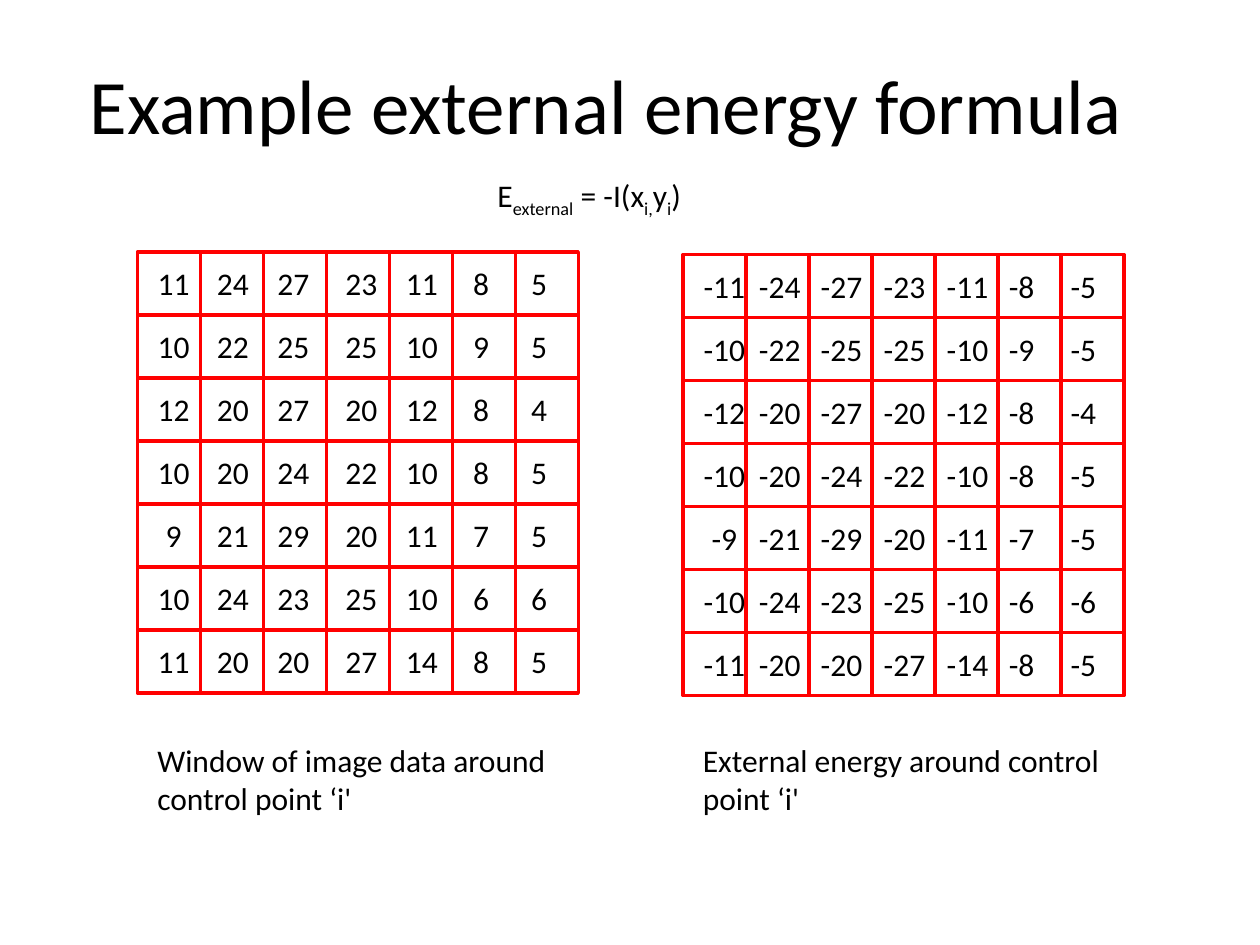
from lxml import etree
from pptx import Presentation
from pptx.dml.color import RGBColor
from pptx.enum import shapes, text
from pptx.oxml.ns import qn
from pptx.util import Inches, Pt

BLACK = RGBColor(0x00, 0x00, 0x00)
RED = RGBColor(0xFF, 0x00, 0x00)
FONT = "Calibri"
CELL = 0.5
TEXT_WIDTH = 3.38

IMAGE_DATA = [
    [11, 24, 27, 23, 11, 8, 5],
    [10, 22, 25, 25, 10, 9, 5],
    [12, 20, 27, 20, 12, 8, 4],
    [10, 20, 24, 22, 10, 8, 5],
    [9, 21, 29, 20, 11, 7, 5],
    [10, 24, 23, 25, 10, 6, 6],
    [11, 20, 20, 27, 14, 8, 5],
]
IMAGE_TABS = [0.13, 0.6, 1.08, 1.62, 2.1, 2.57, 3.03]
ENERGY_TABS = [0.17, 0.61, 1.1, 1.6, 2.1, 2.53, 3.02]


def add_run(paragraph, content, size=18, subscript=False):
    run = paragraph.add_run()
    run.text = content
    run.font.size = Pt(size)
    run.font.name = FONT
    run.font.color.rgb = BLACK
    if subscript:
        run.font._element.set("baseline", "-25000")


def add_text_box(slide, left, top, width, height):
    """Add an empty wrapping text box and return its first paragraph."""
    box = slide.shapes.add_textbox(
        Inches(left), Inches(top), Inches(width), Inches(height))
    box.text_frame.word_wrap = True
    return box.text_frame.paragraphs[0]


def set_centre_tabs(paragraph, positions):
    tab_list = etree.SubElement(paragraph._p.get_or_add_pPr(), qn("a:tabLst"))
    for position in positions:
        etree.SubElement(tab_list, qn("a:tab"),
                         pos=str(Inches(position)), algn="ctr")


def add_title(slide, content):
    title = slide.shapes.title
    title.left, title.top = Inches(0.61), Inches(0.4)
    title.width, title.height = Inches(8.48), Inches(0.84)
    title.text_frame.word_wrap = False
    paragraph = title.text_frame.paragraphs[0]
    paragraph.alignment = text.PP_ALIGN.LEFT
    add_run(paragraph, content, 44)


def add_formula(slide):
    paragraph = add_text_box(slide, 3.85, 1.35, 3.46, 0.4)
    parts = ["E", "external", " = -I(x", "i,", "y", "i", ")"]
    for index, part in enumerate(parts):
        add_run(paragraph, part, subscript=index % 2 == 1)


def add_squares(slide, left, top, rows, columns):
    group = slide.shapes.add_group_shape()
    for row in range(rows):
        for column in range(columns):
            square = group.shapes.add_shape(
                shapes.MSO_SHAPE.RECTANGLE,
                Inches(left + column * CELL), Inches(top + row * CELL),
                Inches(CELL), Inches(CELL))
            square.shadow.inherit = False
            square.fill.background()
            square.line.color.rgb = RED
            square.line.width = Pt(2)


def add_number_grid(slide, left, top, values, tabs, caption):
    """Add red squares, one line of tabbed numbers per row, and a caption."""
    add_squares(slide, left, top, len(values), len(values[0]))
    text_left = left + 0.06
    for index, row in enumerate(values):
        paragraph = add_text_box(
            slide, text_left, top + 0.05 + index * CELL, TEXT_WIDTH, 0.4)
        set_centre_tabs(paragraph, tabs)
        add_run(paragraph, "".join(f"\t{value}" for value in row))
    add_run(add_text_box(slide, text_left, 5.83, TEXT_WIDTH, 0.71), caption)


def main():
    presentation = Presentation()
    presentation.slide_width = Inches(10)
    presentation.slide_height = Inches(7.5)
    slide = presentation.slides.add_slide(presentation.slide_layouts[5])

    add_title(slide, "Example external energy formula")
    add_formula(slide)
    add_number_grid(slide, 1.09, 2.0, IMAGE_DATA, IMAGE_TABS,
                    "Window of image data around control point ‘i'")
    energy = [[-value for value in row] for row in IMAGE_DATA]
    add_number_grid(slide, 5.42, 2.02, energy, ENERGY_TABS,
                    "External energy around control point ‘i'")

    presentation.save("out.pptx")


if __name__ == "__main__":
    main()
